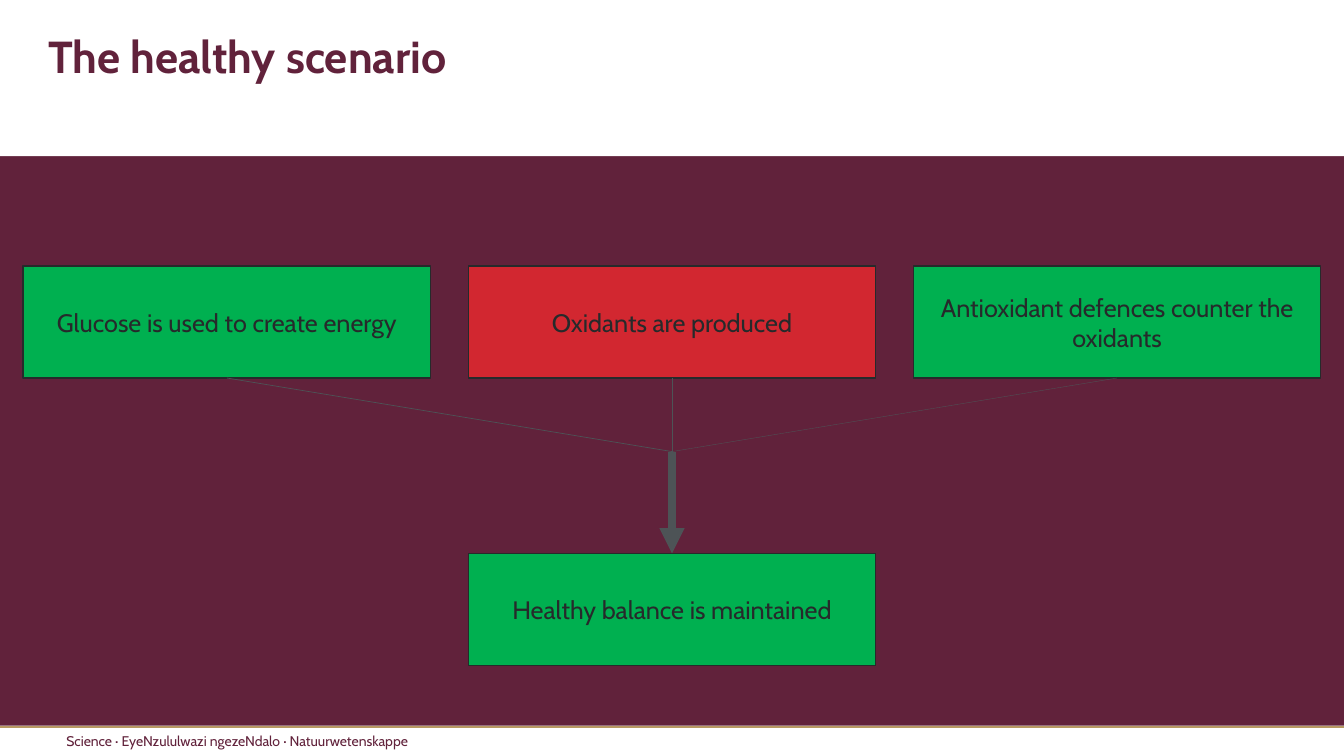
from dataclasses import dataclass

import pptx
import pptx.dml.color
import pptx.enum.shapes
import pptx.enum.text
import pptx.oxml
import pptx.oxml.ns
import pptx.util

Inches = pptx.util.Inches
Pt = pptx.util.Pt
ANCHOR = pptx.enum.text.MSO_ANCHOR
ALIGN = pptx.enum.text.PP_ALIGN
RECTANGLE = pptx.enum.shapes.MSO_SHAPE.RECTANGLE
STRAIGHT = pptx.enum.shapes.MSO_CONNECTOR.STRAIGHT


@dataclass(frozen=True)
class Theme:
    """Colours, font and type sizes of the slide."""
    maroon: str = "61223B"
    white: str = "FFFFFF"
    gold: str = "B79962"
    green: str = "00B050"
    red: str = "D22730"
    ink: str = "262A2B"
    grey: str = "4D5356"
    font: str = "Cabin"
    title_size: int = 32
    step_size: int = 18
    footer_size: int = 10


THEME = Theme()
SLIDE_WIDTH, SLIDE_HEIGHT = 13.33, 7.5
STEP_WIDTH, STEP_HEIGHT, STEP_GAP = 4.04, 1.11, 0.375
CAUSES = [
    ("Glucose is used to create energy", THEME.green, 0.5),
    ("Oxidants are produced", THEME.red, 0.5),
    ("Antioxidant defences counter the oxidants", THEME.green, 0.25),
]
OUTCOME = "Healthy balance is maintained"


def rgb(colour):
    """Return the colour object for a hex string."""
    return pptx.dml.color.RGBColor.from_string(colour)


def write(paragraph, text, size, colour, bold=False):
    """Add one formatted run to a paragraph."""
    run = paragraph.add_run()
    run.text = text
    run.font.name = THEME.font
    run.font.size = Pt(size)
    run.font.bold = bold
    run.font.color.rgb = rgb(colour)


def add_block(slide, left, top, width, height, fill):
    """Add a flat rectangle without an outline."""
    block = slide.shapes.add_shape(
        RECTANGLE, Inches(left), Inches(top), Inches(width), Inches(height))
    block.shadow.inherit = False
    block.fill.solid()
    block.fill.fore_color.rgb = rgb(fill)
    block.line.fill.background()
    return block


def add_line(slide, start, end, colour, weight, arrow=False):
    """Add a straight connector, with an arrowhead at its end if asked."""
    link = slide.shapes.add_connector(
        STRAIGHT, *(Inches(value) for value in (*start, *end)))
    link.line.color.rgb = rgb(colour)
    link.line.width = Pt(weight)
    if arrow:
        head = pptx.oxml.ns.qn("a:tailEnd")
        link.line._get_or_add_ln().makeelement(head)
        link.line._get_or_add_ln().append(
            pptx.oxml.parse_xml(
                f'<a:tailEnd {pptx.oxml.ns.nsdecls("a")} type="triangle"/>'))
    link._element.spPr.append(
        pptx.oxml.parse_xml(f'<a:effectLst {pptx.oxml.ns.nsdecls("a")}/>'))


def add_footer(slide, left, top, width, height):
    """Build the white footer strip with its gold rule and faculty names."""
    add_block(slide, left, top, width, height, THEME.white)
    faculty = slide.shapes.add_textbox(
        Inches(left + 0.56), Inches(top + 0.02), Inches(12.17), Inches(0.29))
    faculty.text_frame.word_wrap = True
    write(faculty.text_frame.paragraphs[0],
          "Science · EyeNzululwazi ngezeNdalo · Natuurwetenskappe",
          THEME.footer_size, THEME.maroon)
    rule_y = top + 0.01
    add_line(slide, (left, rule_y), (left + width, rule_y), THEME.gold, 1.5)


def add_header(slide, left, top, width, height):
    """Build the white header band and place the title on it."""
    add_block(slide, left, top, width, height, THEME.white)
    title = slide.shapes.title
    slide.shapes._spTree.append(title._element)
    title.left, title.top = Inches(left + 0.38), Inches(top + 0.29)
    title.width, title.height = Inches(9.74), Inches(1.11)
    title.text_frame.word_wrap = True
    title.text_frame.vertical_anchor = ANCHOR.TOP
    heading = title.text_frame.paragraphs[0]
    heading.alignment = ALIGN.LEFT
    heading.line_spacing = 0.9
    write(heading, "The healthy scenario", THEME.title_size, THEME.maroon, True)


def add_step(slide, left, top, text, fill):
    """Add one outlined box of the diagram with centred text."""
    step = add_block(slide, left, top, STEP_WIDTH, STEP_HEIGHT, fill)
    step.line.color.rgb = rgb(THEME.ink)
    step.line.width = Pt(1)
    step.text_frame.word_wrap = True
    step.text_frame.vertical_anchor = ANCHOR.MIDDLE
    paragraph = step.text_frame.paragraphs[0]
    paragraph.alignment = ALIGN.CENTER
    write(paragraph, text, THEME.step_size, THEME.ink)


def add_diagram(slide, left, top, width, height):
    """Build three causes that merge into one arrow to the outcome."""
    middle = left + width / 2
    causes_bottom = top + STEP_HEIGHT
    outcome_top = top + height - STEP_HEIGHT
    junction = (middle, causes_bottom + 0.73)
    pitch = STEP_WIDTH + STEP_GAP
    centres = [middle + (column - 1) * pitch for column in range(len(CAUSES))]
    for centre, (text, fill, _) in zip(centres, CAUSES):
        add_step(slide, centre - STEP_WIDTH / 2, top, text, fill)
    add_step(slide, middle - STEP_WIDTH / 2, outcome_top, OUTCOME, THEME.green)
    for centre, (_, _, weight) in zip(centres, CAUSES):
        add_line(slide, (centre, causes_bottom), junction, THEME.grey, weight)
    add_line(slide, junction, (middle, outcome_top), THEME.grey, 6, arrow=True)


def main():
    """Build the slide and save it."""
    deck = pptx.Presentation()
    deck.slide_width = Inches(SLIDE_WIDTH)
    deck.slide_height = Inches(SLIDE_HEIGHT)
    slide = deck.slides.add_slide(deck.slide_layouts.get_by_name("Title Only"))
    slide.background.fill.solid()
    slide.background.fill.fore_color.rgb = rgb(THEME.maroon)
    add_footer(slide, 0, 7.2, SLIDE_WIDTH, 0.3)
    add_header(slide, 0, 0, SLIDE_WIDTH, 1.55)
    add_diagram(slide, 0.23, 2.64, 12.87, 3.96)
    deck.save("out.pptx")


if __name__ == "__main__":
    main()
